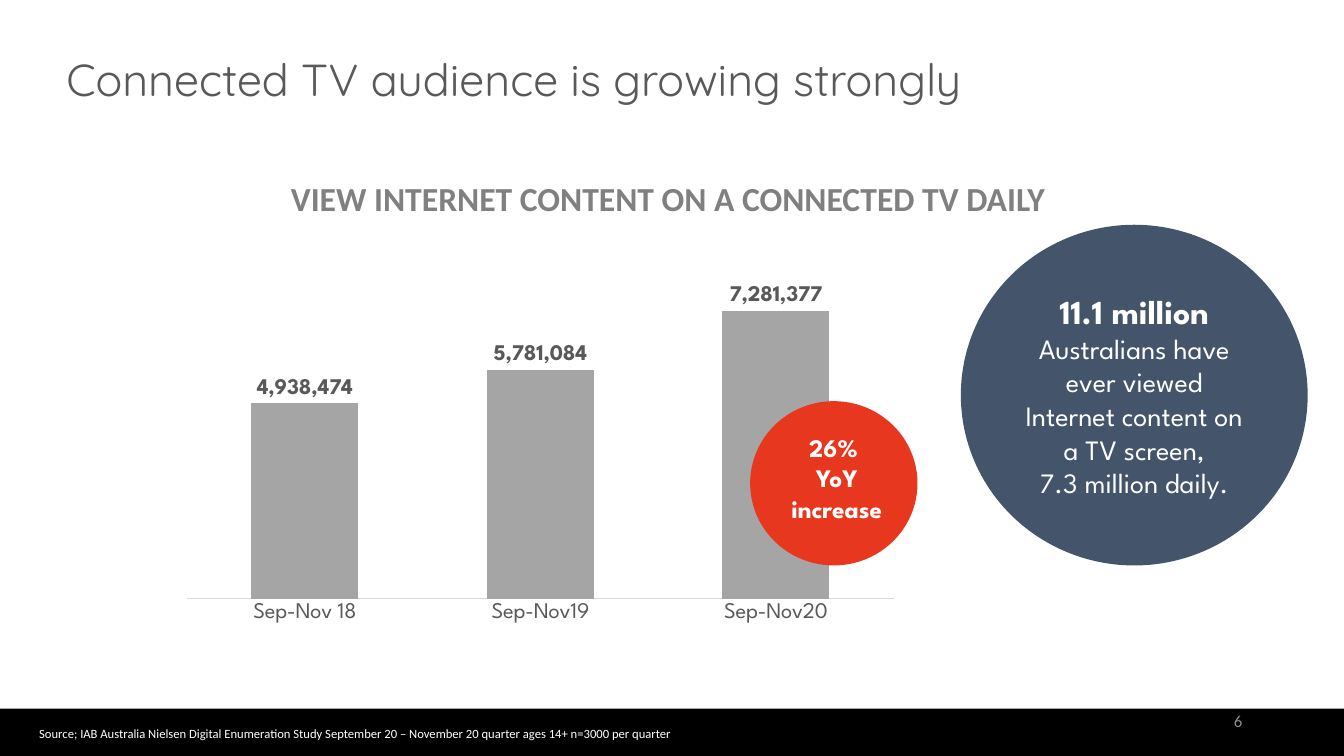
from pptx import Presentation
from pptx.chart.data import CategoryChartData
from pptx.dml.color import RGBColor
from pptx.enum.chart import XL_CHART_TYPE as ChartType
from pptx.enum.chart import XL_LABEL_POSITION as LabelPosition
from pptx.enum.chart import XL_TICK_MARK as TickMark
from pptx.enum.shapes import MSO_SHAPE as Shape
from pptx.enum.text import MSO_ANCHOR as Anchor
from pptx.enum.text import PP_ALIGN as Align
from pptx.util import Inches, Pt

BLACK = RGBColor(0x00, 0x00, 0x00)
WHITE = RGBColor(0xFF, 0xFF, 0xFF)
DARK_GRAY = RGBColor(0x59, 0x59, 0x59)
HEADING_GRAY = RGBColor(0x80, 0x80, 0x80)
NUMBER_GRAY = RGBColor(0x8C, 0x8C, 0x8C)
BAR_GRAY = RGBColor(0xA5, 0xA5, 0xA5)
AXIS_GRAY = RGBColor(0xD9, 0xD9, 0xD9)
RED = RGBColor(0xE8, 0x37, 0x1F)
NAVY = RGBColor(0x44, 0x54, 0x6A)

BODY = "Calibri"
DISPLAY = "League Spartan"
TITLE = "Quicksand"

VIEWERS = {"Sep-Nov 18": 4938474, "Sep-Nov19": 5781084, "Sep-Nov20": 7281377}


def set_font(font, name, size, color, bold=False):
    font.name = name
    font.size = Pt(size)
    font.bold = bold
    font.color.rgb = color


def add_text(slide, box, text, name, size, color, bold=False,
             align=Align.LEFT, anchor=Anchor.TOP):
    shape = slide.shapes.add_textbox(*map(Inches, box))
    frame = shape.text_frame
    frame.word_wrap = True
    frame.vertical_anchor = anchor
    paragraph = frame.paragraphs[0]
    paragraph.text = text
    paragraph.alignment = align
    set_font(paragraph.font, name, size, color, bold)
    return paragraph


def add_solid(slide, kind, box, color):
    shape = slide.shapes.add_shape(kind, *map(Inches, box))
    shape.shadow.inherit = False
    shape.fill.solid()
    shape.fill.fore_color.rgb = color
    shape.line.fill.background()
    return shape


def add_header(slide, left, top):
    title = add_text(slide, (left, top, 11.01, 0.71),
                     "Connected TV audience is growing strongly",
                     TITLE, 32, DARK_GRAY, anchor=Anchor.MIDDLE)
    title.line_spacing = 0.9
    add_text(slide, (0.12, top + 1.26, 13.01, 0.5),
             "VIEW INTERNET CONTENT ON A CONNECTED TV DAILY",
             BODY, 24, HEADING_GRAY, bold=True, align=Align.CENTER)


def add_footer(slide, top):
    add_solid(slide, Shape.RECTANGLE, (0, top, 13.33, 7.5 - top), BLACK)
    add_text(slide, (0.29, top + 0.12, 9.52, 0.4),
             "Source; IAB Australia Nielsen Digital Enumeration Study "
             "September 20 – November 20 quarter ages 14+ n=3000 per quarter",
             BODY, 9, WHITE)
    add_text(slide, (9.42, top - 0.08, 3, 0.4), "6", BODY, 12, NUMBER_GRAY,
             align=Align.RIGHT, anchor=Anchor.MIDDLE)


def add_viewer_chart(slide, box):
    data = CategoryChartData(number_format="#,##0")
    data.categories = list(VIEWERS)
    data.add_series("Series 1", list(VIEWERS.values()))
    chart = slide.shapes.add_chart(
        ChartType.COLUMN_CLUSTERED, *map(Inches, box), data).chart
    chart.has_legend = False
    chart.has_title = False
    set_font(chart.font, BODY, 10, BLACK)

    # Axes
    values = chart.value_axis
    values.minimum_scale = 0
    values.maximum_scale = 8000000
    values.has_major_gridlines = False
    values.visible = False
    categories = chart.category_axis
    categories.major_tick_mark = TickMark.NONE
    categories.format.line.color.rgb = AXIS_GRAY
    categories.format.line.width = Pt(0.75)
    set_font(categories.tick_labels.font, DISPLAY, 16, DARK_GRAY)

    # Bars and their labels
    plot = chart.plots[0]
    plot.gap_width = 120
    plot.overlap = -37
    plot.vary_by_categories = False
    series = plot.series[0]
    series.format.fill.solid()
    series.format.fill.fore_color.rgb = BAR_GRAY
    labels = series.data_labels
    labels.show_value = True
    labels.position = LabelPosition.OUTSIDE_END
    labels.number_format = "#,##0"
    labels.number_format_is_linked = False
    set_font(labels.font, DISPLAY, 16, DARK_GRAY, bold=True)


def add_growth_badge(slide, left, top):
    add_solid(slide, Shape.OVAL, (left, top, 1.66, 1.63), RED)
    add_text(slide, (left + 0.03, top + 0.26, 1.66, 1.01),
             "26% \vYoY\vincrease", DISPLAY, 18, WHITE,
             bold=True, align=Align.CENTER)


def add_audience_circle(slide, box):
    frame = add_solid(slide, Shape.OVAL, box, NAVY).text_frame
    frame.word_wrap = True
    frame.vertical_anchor = Anchor.MIDDLE
    paragraph = frame.paragraphs[0]
    paragraph.alignment = Align.CENTER
    set_font(paragraph.font, DISPLAY, 20, WHITE)
    figure = paragraph.add_run()
    figure.text = "11.1 million "
    figure.font.size = Pt(24)
    figure.font.bold = True
    paragraph.add_run().text = ("Australians have ever viewed "
                                "Internet content on a TV screen,")
    paragraph.add_line_break()
    paragraph.add_run().text = "7.3 million daily."


def main():
    presentation = Presentation()
    presentation.slide_width = Inches(13.33)
    presentation.slide_height = Inches(7.5)
    slide = presentation.slides.add_slide(presentation.slide_layouts[6])
    add_footer(slide, 7.03)
    add_viewer_chart(slide, (1.71, 2.73, 7.3, 3.53))
    add_header(slide, 0.56, 0.46)
    add_growth_badge(slide, 7.44, 3.98)
    add_audience_circle(slide, (9.53, 2.23, 3.44, 3.38))
    presentation.save("out.pptx")


if __name__ == "__main__":
    main()
